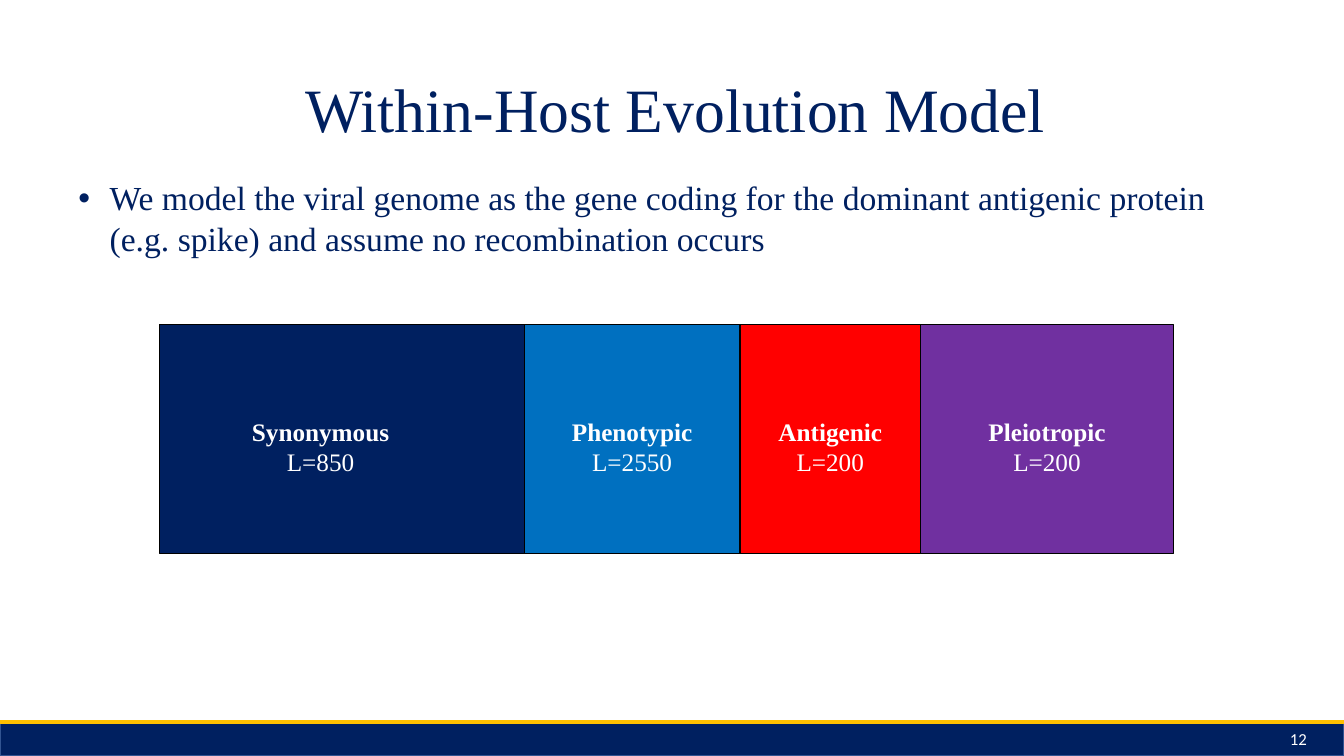
from dataclasses import dataclass

from lxml import etree
from pptx import Presentation
from pptx.dml.color import RGBColor
from pptx.enum.shapes import MSO_CONNECTOR, MSO_SHAPE
from pptx.enum.text import MSO_ANCHOR, PP_ALIGN
from pptx.oxml.ns import qn
from pptx.util import Inches, Pt

RECTANGLE = MSO_SHAPE.RECTANGLE
STRAIGHT = MSO_CONNECTOR.STRAIGHT
LEFT, CENTER, RIGHT = PP_ALIGN.LEFT, PP_ALIGN.CENTER, PP_ALIGN.RIGHT
TOP, MIDDLE = MSO_ANCHOR.TOP, MSO_ANCHOR.MIDDLE


@dataclass(frozen=True)
class Theme:
    """Colours, fonts and type sizes of the slide."""
    navy: str = "002060"
    blue: str = "0070C0"
    red: str = "FF0000"
    purple: str = "7030A0"
    gold: str = "FFC000"
    footer_edge: str = "325491"
    black: str = "000000"
    white: str = "FFFFFF"
    serif: str = "Times New Roman"
    sans: str = "Calibri"
    title_size: int = 44
    body_size: int = 24
    label_size: int = 18
    number_size: int = 12


class SlideBuilder:
    """Draws styled elements on the current slide."""

    def __init__(self, slide, theme):
        """Keep the slide and its theme."""
        self.slide = slide
        self.theme = theme

    def format_text(self, shape, text, size, color, align=LEFT, anchor=TOP, font=None):
        """Write text in a shape and format its runs."""
        frame = shape.text_frame
        frame.word_wrap = True
        frame.vertical_anchor = anchor
        frame.text = text
        for paragraph in frame.paragraphs:
            paragraph.alignment = align
            for run in paragraph.runs:
                run.font.name = font or self.theme.serif
                run.font.size = Pt(size)
                run.font.color.rgb = RGBColor.from_string(color)
        return frame

    def title(self, text, left, top, width, height):
        """Place and fill the title placeholder."""
        shape = self.slide.shapes.title
        shape.left, shape.top = Inches(left), Inches(top)
        shape.width, shape.height = Inches(width), Inches(height)
        self.format_text(shape, text, self.theme.title_size, self.theme.navy, CENTER)

    def text(self, text, left, top, width, height, size, color, **style):
        """Add a text box."""
        shape = self.slide.shapes.add_textbox(
            Inches(left), Inches(top), Inches(width), Inches(height))
        return self.format_text(shape, text, size, color, **style)

    def bullet(self, text, left, top, width, height):
        """Add a bulleted paragraph."""
        frame = self.text(text, left, top, width, height,
                          self.theme.body_size, self.theme.navy)
        properties = frame.paragraphs[0]._p.get_or_add_pPr()
        properties.set("marL", str(Inches(0.31)))
        properties.set("indent", str(-Inches(0.31)))
        etree.SubElement(properties, qn("a:buFont"), typeface="Arial")
        etree.SubElement(properties, qn("a:buChar"), char="•")

    def rectangle(self, left, top, width, height, fill, line):
        """Add a filled rectangle with a thin outline."""
        shape = self.slide.shapes.add_shape(
            RECTANGLE, Inches(left), Inches(top), Inches(width), Inches(height))
        shape.shadow.inherit = False
        shape.fill.solid()
        shape.fill.fore_color.rgb = RGBColor.from_string(fill)
        shape.line.color.rgb = RGBColor.from_string(line)
        shape.line.width = Pt(1)

    def rule(self, left, right, top, color, weight):
        """Add a horizontal line."""
        connector = self.slide.shapes.add_connector(
            STRAIGHT, Inches(left), Inches(top), Inches(right), Inches(top))
        connector.line.color.rgb = RGBColor.from_string(color)
        connector.line.width = Pt(weight)
        etree.SubElement(connector._element.spPr, qn("a:effectLst"))

    def label(self, name, length, center, top):
        """Add a bold region name above its length."""
        width = 1.8
        frame = self.text(f"{name}\n{length}", center - width / 2, top, width, 0.7,
                          self.theme.label_size, self.theme.white, align=CENTER)
        frame.paragraphs[0].runs[0].font.bold = True


def main():
    """Build and save the slide."""
    presentation = Presentation()
    presentation.slide_width = Inches(13.33)
    presentation.slide_height = Inches(7.5)
    theme = Theme()
    slide = presentation.slides.add_slide(presentation.slide_layouts[5])
    builder = SlideBuilder(slide, theme)

    builder.title("Within-Host Evolution Model", 2.2, 0.65, 9, 1.25)
    builder.bullet("We model the viral genome as the gene coding for the dominant antigenic "
                   "protein (e.g. spike) and assume no recombination occurs",
                   0.68, 1.71, 12.04, 0.91)

    regions = [
        ("Synonymous", "L=850", 3.62, theme.navy, -0.21),
        ("Phenotypic", "L=2550", 2.14, theme.blue, 0),
        ("Antigenic", "L=200", 1.79, theme.red, 0),
        ("Pleiotropic", "L=200", 2.51, theme.purple, 0),
    ]
    left = 1.58
    for name, length, width, color, shift in regions:
        builder.rectangle(left, 3.22, width, 2.27, color, theme.black)
        builder.label(name, length, left + width / 2 + shift, 4.08)
        left += width

    builder.rectangle(0, 7.16, 13.33, 0.34, theme.navy, theme.footer_edge)
    builder.rule(0, 13.33, 7.16, theme.gold, 3)
    builder.text("12", 10.06, 7.13, 3, 0.4, theme.number_size, theme.white,
                 align=RIGHT, anchor=MIDDLE, font=theme.sans)
    presentation.save("out.pptx")


if __name__ == "__main__":
    main()
